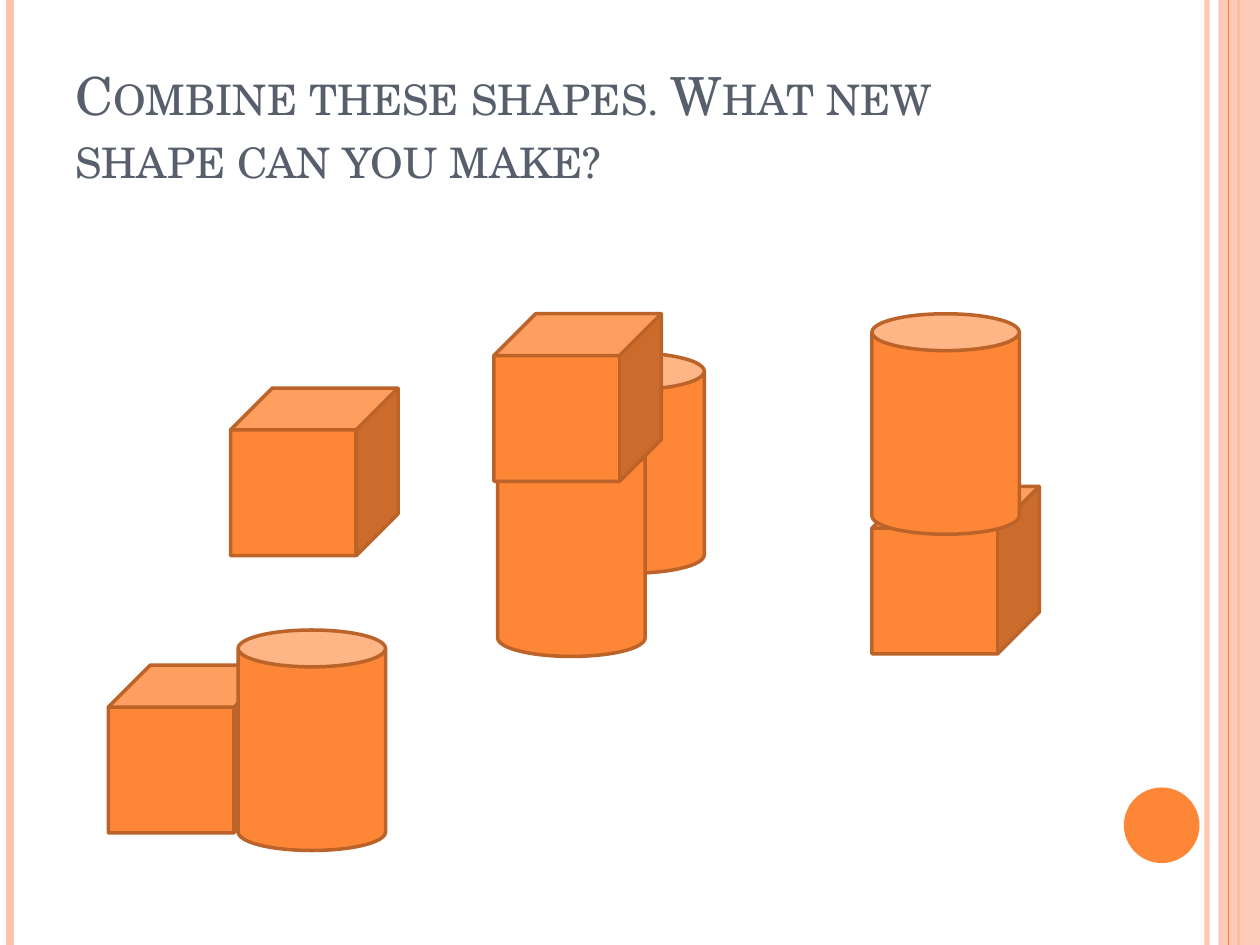
"""Build a slide that asks which new shapes cubes and cylinders can make."""
from dataclasses import dataclass

from lxml.etree import SubElement
from pptx import Presentation
from pptx.dml.color import RGBColor
from pptx.enum.shapes import MSO_CONNECTOR, MSO_SHAPE
from pptx.enum.text import MSO_ANCHOR
from pptx.oxml.ns import qn
from pptx.util import Inches, Pt


@dataclass(frozen=True)
class Theme:
    orange: RGBColor = RGBColor.from_string("FE8637")
    peach: RGBColor = RGBColor.from_string("FEC3AE")
    outline: RGBColor = RGBColor.from_string("BC6329")
    ink: RGBColor = RGBColor.from_string("575F6D")
    font: str = "TeX Gyre Schola"
    title_size: Pt = Pt(30)
    outline_width: Pt = Pt(2)


def add_solid(kind, left, top, width, height, color):
    solid = slide.shapes.add_shape(
        kind, Inches(left), Inches(top), Inches(width), Inches(height))
    solid.shadow.inherit = False
    solid.fill.solid()
    solid.fill.fore_color.rgb = color
    solid.line.fill.background()
    return solid


def set_opacity(properties, percent):
    color = next(properties.iter(qn("a:srgbClr")))
    SubElement(color, qn("a:alpha")).set("val", str(percent * 1000))


theme = Theme()
presentation = Presentation()
presentation.slide_width = Inches(10)
presentation.slide_height = Inches(7.5)
slide = presentation.slides.add_slide(presentation.slide_layouts[6])

stripes = [
    (9.58, theme.peach, 3, 93),
    (0.08, theme.peach, 4.5, 100),
    (9.83, theme.orange, 1.5, 100),
    (9.75, theme.orange, 0.75, 100),
]
for x, color, weight, opacity in stripes:
    if x == 9.75:
        band = add_solid(MSO_SHAPE.RECTANGLE, 9.67, 0, 0.33, 7.5, theme.peach)
        set_opacity(band.fill._xPr, 87)
    stripe = slide.shapes.add_connector(
        MSO_CONNECTOR.STRAIGHT, Inches(x), 0, Inches(x), Inches(7.5))
    stripe.line.color.rgb = color
    stripe.line.width = Pt(weight)
    SubElement(stripe._element.spPr, qn("a:effectLst"))
    if opacity < 100:
        set_opacity(stripe._element.spPr, opacity)

add_solid(MSO_SHAPE.OVAL, 8.92, 6.25, 0.6, 0.6, theme.orange)

title = slide.shapes.add_textbox(
    Inches(0.5), Inches(0.3), Inches(8.17), Inches(1.25)).text_frame
title.word_wrap = True
title.vertical_anchor = MSO_ANCHOR.BOTTOM
question = title.paragraphs[0].add_run()
question.text = "Combine these shapes. What new shape can you make?"
question.font.name = theme.font
question.font.size = theme.title_size
question.font.color.rgb = theme.ink
question.font._element.set("cap", "small")

cube = (MSO_SHAPE.CUBE, 1.33, 1.33)
cylinder = (MSO_SHAPE.CAN, 1.17, 1.75)
blocks = [
    (cube, 1.83, 3.08),
    (cylinder, 4.42, 2.8),
    (cylinder, 3.95, 3.46),
    (cube, 3.92, 2.49),
    (cube, 6.92, 3.86),
    (cylinder, 6.92, 2.49),
    (cube, 0.86, 5.28),
    (cylinder, 1.89, 5),
]
for (kind, width, height), left, top in blocks:
    block = add_solid(kind, left, top, width, height, theme.orange)
    block.line.color.rgb = theme.outline
    block.line.width = theme.outline_width

presentation.save("out.pptx")
